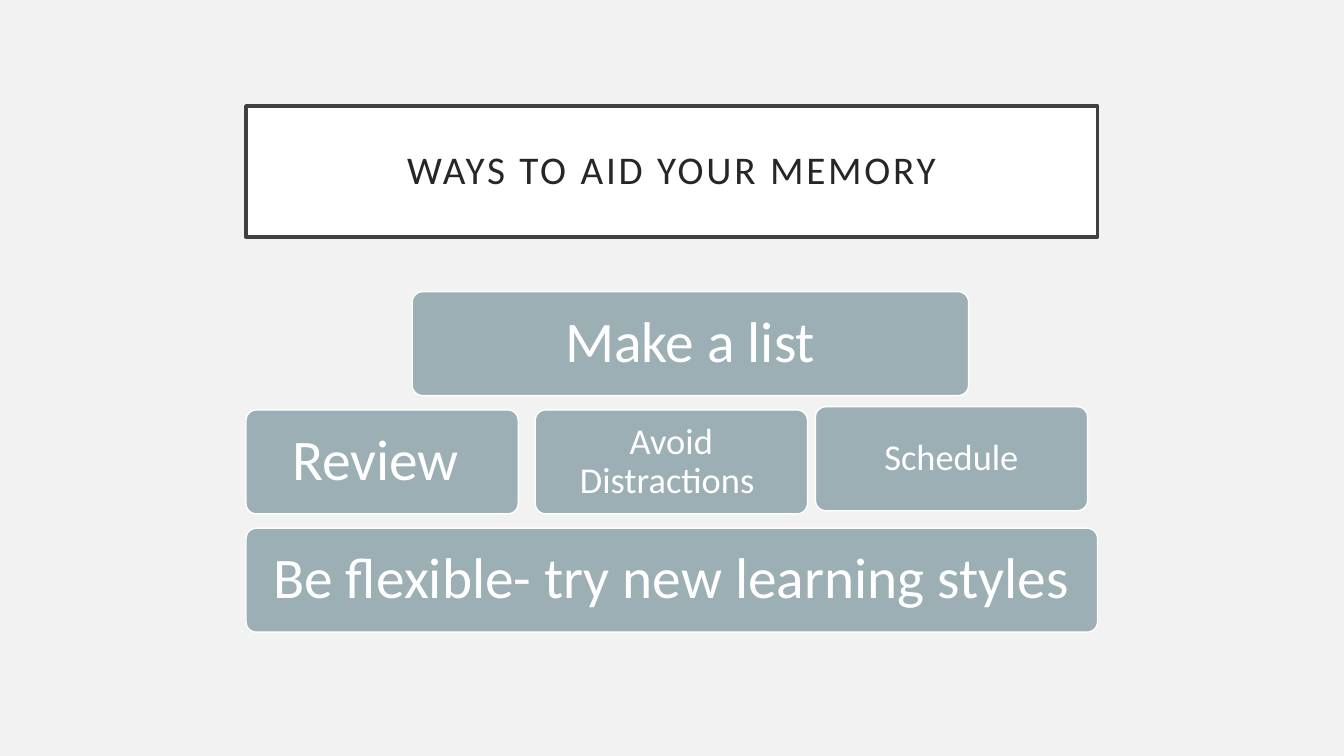
from pptx import Presentation
from pptx.dml.color import RGBColor
from pptx.enum.shapes import MSO_SHAPE
from pptx.enum.text import MSO_ANCHOR, PP_ALIGN
from pptx.util import Cm, Pt

RECTANGLE = MSO_SHAPE.RECTANGLE
ROUNDED = MSO_SHAPE.ROUNDED_RECTANGLE
MIDDLE = MSO_ANCHOR.MIDDLE
CENTER = PP_ALIGN.CENTER

FONT = "Calibri"
LEFT, WIDTH = 6.2, 21.46
BLOCK_HEIGHT, ROW_STEP = 2.62, 2.98
SMALL_WIDTH = 6.86


def color(hex_string):
    return RGBColor.from_string(hex_string)


def add_box(slide, kind, box, text, size, inset, fill, line, line_width, text_color):
    """Add a filled shape with centred text; box is left, top, width, height in cm."""
    shape = slide.shapes.add_shape(kind, *(Cm(length) for length in box))
    shape.shadow.inherit = False
    shape.fill.solid()
    shape.fill.fore_color.rgb = color(fill)
    shape.line.color.rgb = color(line)
    shape.line.width = Pt(line_width)

    frame = shape.text_frame
    frame.word_wrap = True
    frame.vertical_anchor = MIDDLE
    frame.margin_left = frame.margin_right = Cm(inset)
    frame.margin_top = frame.margin_bottom = Cm(inset)
    frame.text = text
    paragraph = frame.paragraphs[0]
    paragraph.alignment = CENTER
    paragraph.line_spacing = 0.9
    font = paragraph.runs[0].font
    font.name = FONT
    font.size = Pt(size)
    font.color.rgb = color(text_color)
    return shape


def add_title(slide, box, text):
    shape = add_box(slide, RECTANGLE, box, text, 28, 0.51,
                    "FFFFFF", "404040", 2.5, "262626")
    # Letter spacing in hundredths of a point
    run = shape.text_frame.paragraphs[0].runs[0]
    run.font._element.set("spc", "200")


def add_block(slide, box, text, size):
    inset = 0.43 if size > 30 else 0.28
    shape = add_box(slide, ROUNDED, box, text, size, inset,
                    "9BAFB5", "FFFFFF", 1, "FFFFFF")
    shape.adjustments[0] = 0.1


def add_block_pyramid(slide, left, top, width):
    # Row, offset from the left, nudge downwards, width, text, size
    blocks = [
        (2, 0, 0, width, "Be flexible- try new learning styles", 41),
        (0, 4.19, 0, 14.02, "Make a list", 41),
        (1, 14.35, -0.08, SMALL_WIDTH, "Schedule", 26),
        (1, 7.29, 0, SMALL_WIDTH, "Avoid Distractions ", 26),
        (1, 0, 0, SMALL_WIDTH, "Review ", 41),
    ]
    for row, offset, nudge, block_width, text, size in blocks:
        box = (left + offset, top + row * ROW_STEP + nudge, block_width, BLOCK_HEIGHT)
        add_block(slide, box, text, size)


def main():
    presentation = Presentation()
    presentation.slide_width = Cm(33.87)
    presentation.slide_height = Cm(19.05)
    slide = presentation.slides.add_slide(presentation.slide_layouts[6])
    slide.background.fill.solid()
    slide.background.fill.fore_color.rgb = color("F2F2F2")

    add_title(slide, (LEFT, 2.67, WIDTH, 3.3), "WAYS TO AID YOUR MEMORY")
    add_block_pyramid(slide, LEFT, 7.35, WIDTH)
    presentation.save("out.pptx")


if __name__ == "__main__":
    main()
